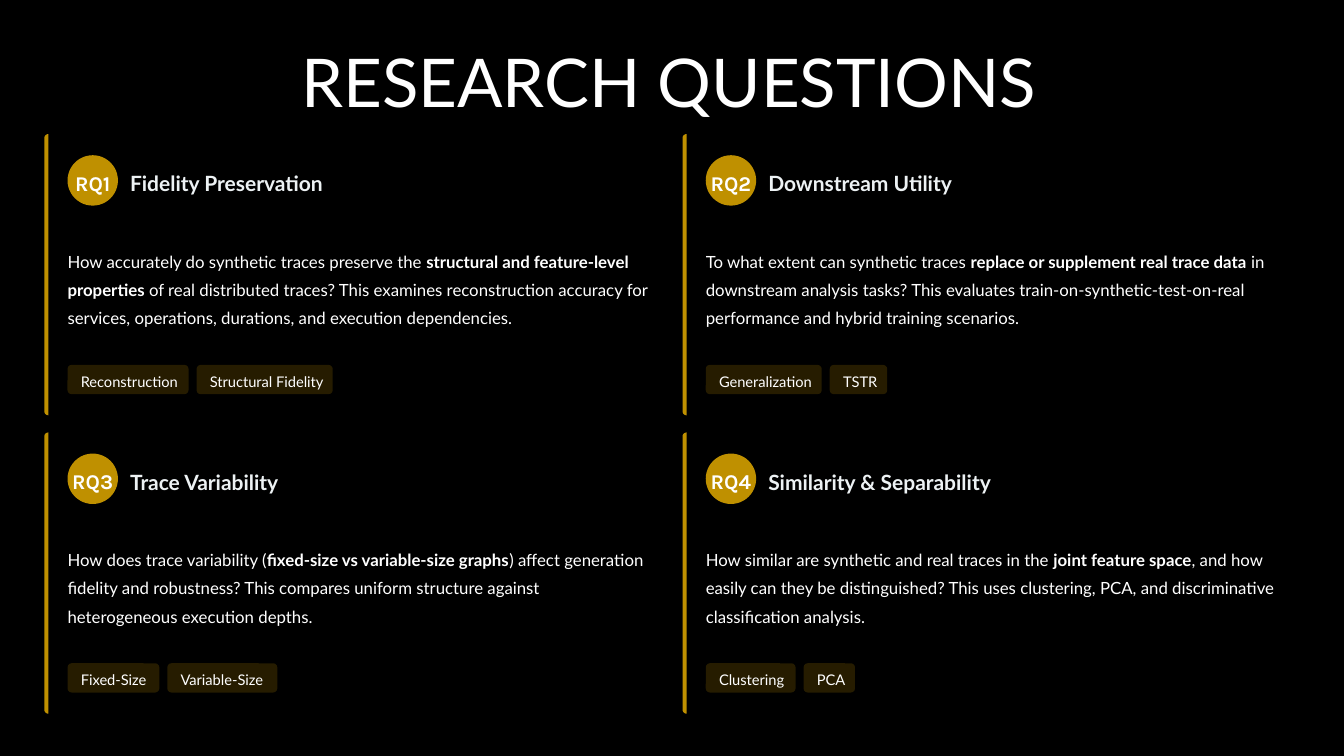
from math import cos, pi, sin

from pptx import Presentation
from pptx.dml.color import RGBColor
from pptx.enum.shapes import MSO_SHAPE
from pptx.enum.text import MSO_ANCHOR, PP_ALIGN
from pptx.oxml.xmlchemy import OxmlElement
from pptx.util import Inches, Pt

BLACK, WHITE, PALE, GOLD = "000000", "FFFFFF", "EDF2F4", "BF9000"
CARD_W, CARD_H = 6.15, 2.79
CARD_LEFT, CARD_TOP = 0.44, 1.33
COLUMN_STEP, ROW_STEP = 6.33, 2.96
PAD = 0.23
BAR_W = 0.04
TAG_H, TAG_GAP = 0.29, 0.08

# Badge, heading, (text, bold text, text), ((tag, width), ...)
QUESTIONS = [
    ("RQ1", "Fidelity Preservation",
     ("How accurately do synthetic traces preserve the ",
      "structural and feature-level properties",
      " of real distributed traces? This examines reconstruction accuracy for "
      "services, operations, durations, and execution dependencies."),
     (("Reconstruction", 1.2), ("Structural Fidelity", 1.35))),
    ("RQ2", "Downstream Utility",
     ("To what extent can synthetic traces ",
      "replace or supplement real trace data",
      " in downstream analysis tasks? This evaluates "
      "train-on-synthetic-test-on-real performance and hybrid training scenarios."),
     (("Generalization", 1.15), ("TSTR", 0.57))),
    ("RQ3", "Trace Variability",
     ("How does trace variability (",
      "fixed-size vs variable-size graphs",
      ") affect generation fidelity and robustness? This compares uniform "
      "structure against heterogeneous execution depths."),
     (("Fixed-Size", 0.91), ("Variable-Size", 1.09))),
    ("RQ4", "Similarity & Separability",
     ("How similar are synthetic and real traces in the ",
      "joint feature space",
      ", and how easily can they be distinguished? This uses clustering, PCA, "
      "and discriminative classification analysis."),
     (("Clustering", 0.89), ("PCA", 0.51))),
]


def rgb(color):
    return RGBColor.from_string(color)


def paint(sp, color, opacity=100):
    sp.shadow.inherit = False
    sp.line.fill.background()
    sp.fill.solid()
    sp.fill.fore_color.rgb = rgb(color)
    if opacity < 100:
        alpha = OxmlElement("a:alpha")
        alpha.set("val", str(opacity * 1000))
        sp.fill._xPr.find(".//{*}srgbClr").append(alpha)


def add_preset(slide, kind, x, y, w, h, color, opacity=100, radius=None):
    sp = slide.shapes.add_shape(kind, Inches(x), Inches(y), Inches(w), Inches(h))
    if radius is not None:
        sp.adjustments[0] = radius / min(w, h)
    paint(sp, color, opacity)
    return sp


def write(sp, parts, size, color=WHITE, font="Lato", align=PP_ALIGN.LEFT,
          spacing=1.2, margins=(0, 0, 0, 0), anchor=MSO_ANCHOR.MIDDLE, wrap=True):
    """Fill a shape with one paragraph made of (text, bold) parts."""
    tf = sp.text_frame
    tf.word_wrap = wrap
    tf.vertical_anchor = anchor
    tf.margin_left, tf.margin_top, tf.margin_right, tf.margin_bottom = map(Inches, margins)
    p = tf.paragraphs[0]
    p.alignment = align
    p.line_spacing = spacing
    for text, bold in parts:
        r = p.add_run()
        r.text = text
        r.font.name = font
        r.font.size = Pt(size)
        r.font.bold = bold
        r.font.color.rgb = rgb(color)


def add_text(slide, x, y, w, h, parts, size, **style):
    box = slide.shapes.add_textbox(Inches(x), Inches(y), Inches(w), Inches(h))
    write(box, parts, size, **style)


def add_accent_bar(slide, x, y):
    """Draw a thin bar whose two left corners are rounded."""
    arc = [(BAR_W * (1 - sin(i * pi / 12)), BAR_W * (1 - cos(i * pi / 12)))
           for i in range(7)]
    left_side = arc + [(dx, CARD_H - dy) for dx, dy in reversed(arc)]
    points = [(Inches(x + dx), Inches(y + dy)) for dx, dy in left_side]
    builder = slide.shapes.build_freeform(*points[0])
    builder.add_line_segments(points[1:], close=True)
    paint(builder.convert_to_shape(), GOLD)


def add_tags(slide, x, y, tags):
    for label, width in tags:
        tag = add_preset(slide, MSO_SHAPE.ROUNDED_RECTANGLE, x, y, width, TAG_H,
                         GOLD, opacity=20, radius=0.04)
        write(tag, [(label, False)], 10.5, margins=(0.12, 0.04, 0, 0.04))
        x += width + TAG_GAP


def add_card(slide, x, y, badge, heading, body, tags):
    add_preset(slide, MSO_SHAPE.ROUNDED_RECTANGLE, x, y, CARD_W, CARD_H,
               BLACK, opacity=80, radius=0.08)
    add_accent_bar(slide, x, y)
    circle = add_preset(slide, MSO_SHAPE.OVAL, x + PAD, y + 0.21, 0.5, 0.5, GOLD)
    write(circle, [(badge, True)], 15, font="Karla", align=PP_ALIGN.CENTER, wrap=False)
    add_text(slide, x + 0.85, y + 0.32, 2.5, 0.29, [(heading, True)], 15, color=PALE)
    add_text(slide, x + PAD, y + 0.84, 5.79, 1.33,
             zip(body, (False, True, False)), 12, spacing=1.4)
    add_tags(slide, x + PAD, y + 2.29, tags)


def main():
    prs = Presentation()
    prs.slide_width, prs.slide_height = Inches(13.33), Inches(7.5)
    slide = prs.slides.add_slide(prs.slide_layouts[6])
    slide.background.fill.solid()
    slide.background.fill.fore_color.rgb = rgb(BLACK)

    for i, question in enumerate(QUESTIONS):
        row, column = divmod(i, 2)
        add_card(slide, CARD_LEFT + column * COLUMN_STEP,
                 CARD_TOP + row * ROW_STEP, *question)
    add_text(slide, 2.89, 0.15, 7.95, 1.11, [("RESEARCH QUESTIONS", False)], 48,
             spacing=0.9, margins=(0.1, 0.05, 0.1, 0.05), anchor=MSO_ANCHOR.BOTTOM)
    prs.save("out.pptx")


if __name__ == "__main__":
    main()
